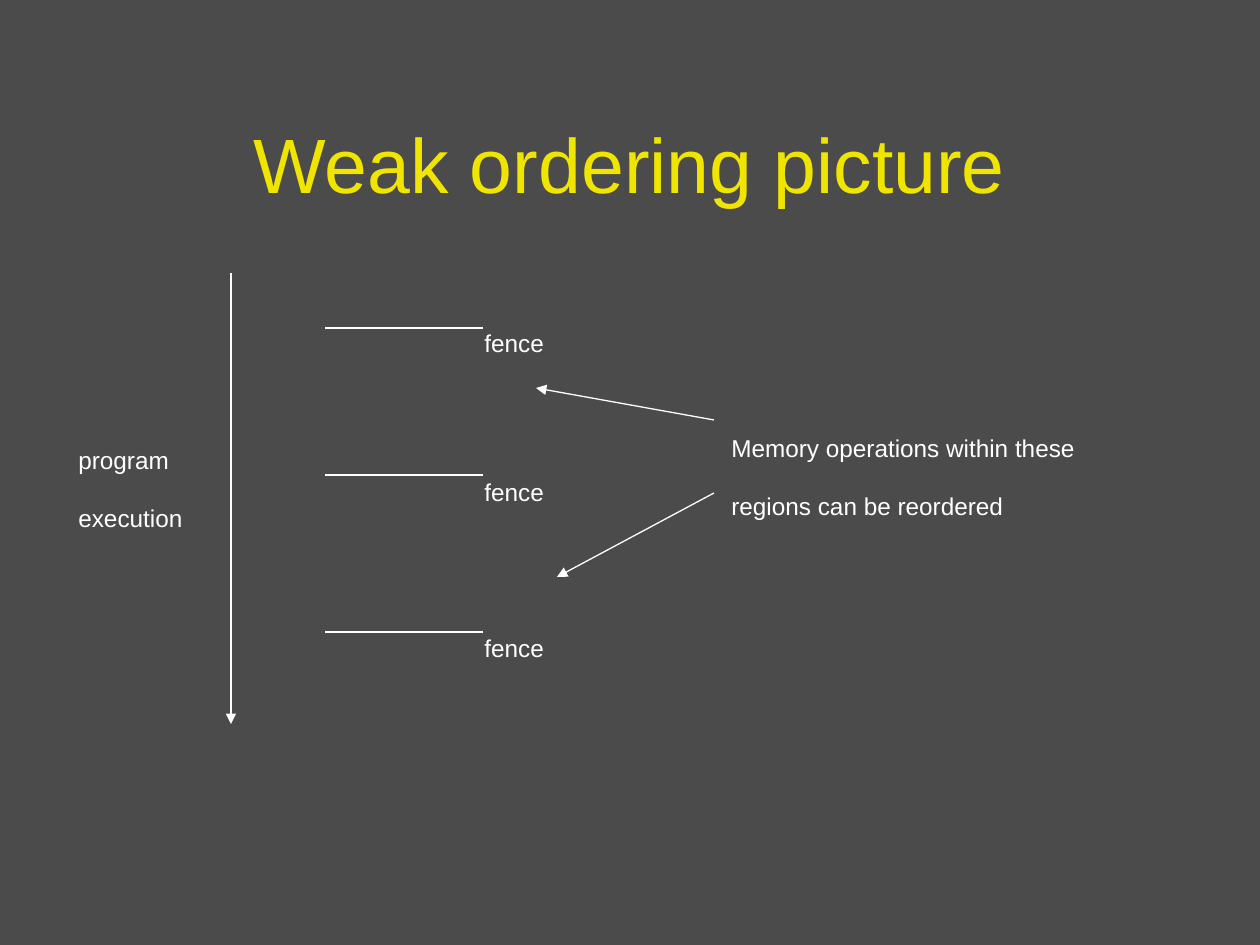
from dataclasses import dataclass

from lxml import etree
from pptx import Presentation
from pptx.dml.color import RGBColor
from pptx.enum.shapes import MSO_CONNECTOR
from pptx.enum.text import MSO_ANCHOR, MSO_AUTO_SIZE, PP_ALIGN
from pptx.oxml.ns import qn
from pptx.util import Pt

STRAIGHT = MSO_CONNECTOR.STRAIGHT
MIDDLE = MSO_ANCHOR.MIDDLE
CENTER = PP_ALIGN.CENTER
GROW = MSO_AUTO_SIZE.SHAPE_TO_FIT_TEXT
EMU_PER_PX = 914400 / 126
TITLE_ONLY = 5


def px(n):
    return round(n * EMU_PER_PX)


@dataclass
class Theme:
    font: str = "Arial"
    background: RGBColor = RGBColor(0x4B, 0x4B, 0x4B)
    title: RGBColor = RGBColor(0xF0, 0xE5, 0x00)
    ink: RGBColor = RGBColor(0xFF, 0xFF, 0xFF)
    title_size: float = 44
    label_size: float = 24
    line_width: float = 0.75


class Diagram:
    def __init__(self, slide, theme):
        self.slide = slide
        self.theme = theme
        slide.background.fill.solid()
        slide.background.fill.fore_color.rgb = theme.background

    def style(self, font, size, color):
        font.name = self.theme.font
        font.size = Pt(size)
        font.color.rgb = color

    def title(self, text, x, y, w, h):
        sp = self.slide.shapes.title
        sp.left, sp.top, sp.width, sp.height = map(px, (x, y, w, h))
        tf = sp.text_frame
        tf.text = text
        tf.vertical_anchor = MIDDLE
        p = tf.paragraphs[0]
        p.alignment = CENTER
        self.style(p.font, self.theme.title_size, self.theme.title)

    def label(self, text, x, y, w, h):
        sp = self.slide.shapes.add_textbox(*map(px, (x, y, w, h)))
        tf = sp.text_frame
        tf.text = text
        tf.word_wrap = False
        tf.auto_size = GROW
        for p in tf.paragraphs:
            self.style(p.font, self.theme.label_size, self.theme.ink)
            for r in p.runs:  # lowered text
                r.font._element.set("baseline", "-25000")

    def line(self, x1, y1, x2, y2, arrow=False):
        cxn = self.slide.shapes.add_connector(STRAIGHT, *map(px, (x1, y1, x2, y2)))
        cxn.line.color.rgb = self.theme.ink
        cxn.line.width = Pt(self.theme.line_width)
        if arrow:
            ln = cxn.line._get_or_add_ln()
            etree.SubElement(ln, qn("a:tailEnd"), type="triangle")
        etree.SubElement(cxn._element.spPr, qn("a:effectLst"))


def main():
    prs = Presentation()
    prs.slide_width, prs.slide_height = px(1260), px(945)
    slide = prs.slides.add_slide(prs.slide_layouts[TITLE_ONLY])
    d = Diagram(slide, Theme())
    d.title("Weak ordering picture", 94, 84, 1071, 158)

    # Fences
    for line_y, label_y in ((328, 294), (475, 443), (632, 599)):
        d.line(325, line_y, 483, line_y)
        d.label("fence", 472, label_y, 111, 54)

    # Program execution runs downwards
    d.line(231, 273, 231, 724, arrow=True)
    d.label("program\nexecution", 66, 411, 175, 97)

    # Regions between the fences
    d.label("Memory operations within these\nregions can be reordered",
            719, 399, 519, 97)
    d.line(714, 420, 536, 388, arrow=True)
    d.line(714, 493, 557, 577, arrow=True)

    prs.save("out.pptx")


if __name__ == "__main__":
    main()
